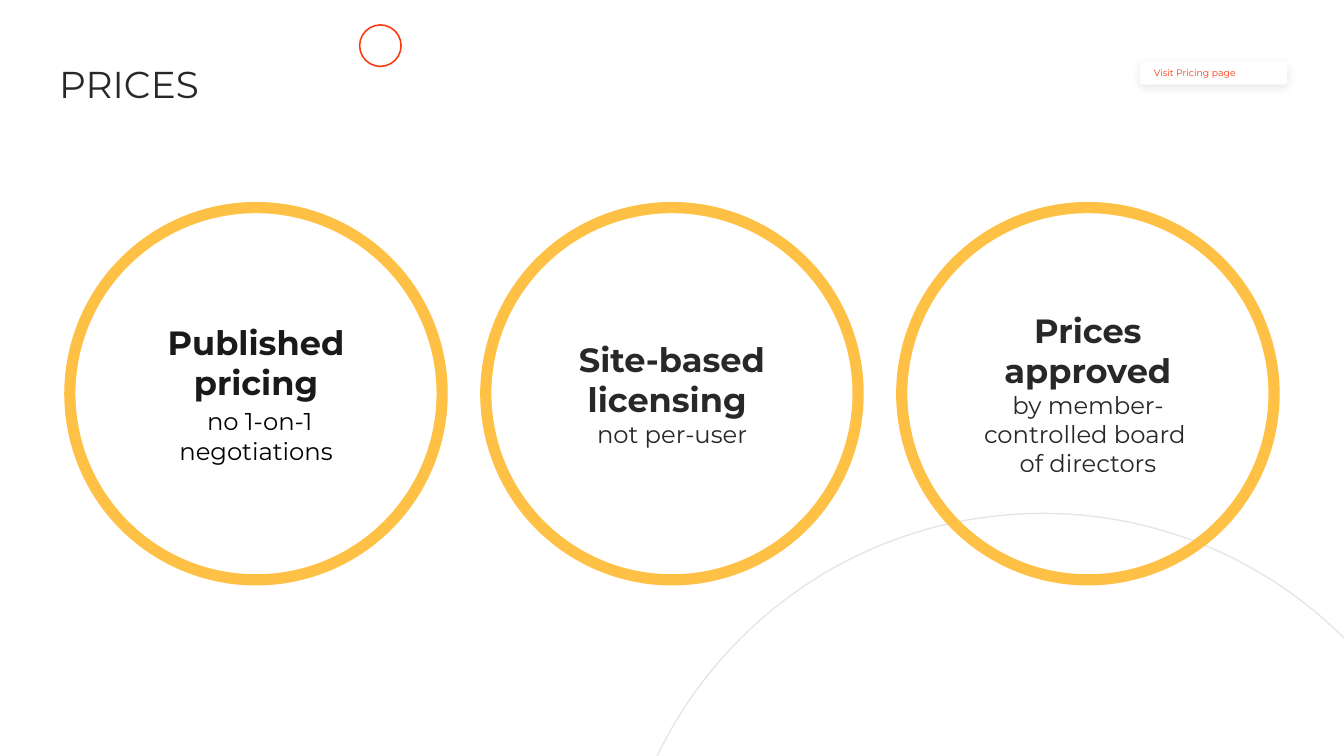
from dataclasses import dataclass

from lxml.etree import SubElement
from pptx import Presentation
from pptx.dml.color import RGBColor
from pptx.enum.shapes import MSO_SHAPE as Shape
from pptx.enum.text import MSO_ANCHOR as Anchor, MSO_AUTO_SIZE as AutoSize, PP_ALIGN as Align
from pptx.oxml.ns import qn
from pptx.util import Inches, Pt

FONT = "Montserrat"
DARK, ORANGE, YELLOW, GREY, WHITE = "282828", "FE360B", "FFC145", "E7E6E6", "FFFFFF"
WIDTH = 10
MARGIN, DIAMETER = 0.52, 2.77
RING_MIDDLE = 2.93

# Outline of the background arc: three corners, then two curves of three points each
ARC_CORNERS = [(10.94, 6.97), (4.58, 6.97), (4.59, 6.68)]
ARC_CURVES = [(4.76, 5.07), (6.11, 3.82), (7.76, 3.82),
              (9.4, 3.82), (10.76, 5.07), (10.92, 6.68)]


@dataclass
class Run:
    text: str
    size: float
    color: str = DARK
    bold: bool = False


@dataclass
class Ring:
    paragraphs: list[list[Run]]


RINGS = [
    Ring([[Run("Published pricing", 18, "1A1A1A", True)],
          [Run(" ", 15), Run("no 1-on-1 negotiations", 13, "000000")]]),
    Ring([[Run("Site-based", 18, bold=True)],
          [Run("licensing ", 18, bold=True)],
          [Run("not per-user", 13)]]),
    Ring([[Run("Prices approved", 18, bold=True)],
          [Run("by member-", 13)],
          [Run("controlled board \n", 13), Run("of directors", 13)]]),
]


def rgb(color: str) -> RGBColor:
    return RGBColor.from_string(color)


def paint(s, fill: str | None = None, line: str | None = None, width: float = 0) -> None:
    s.shadow.inherit = False
    if fill:
        s.fill.solid()
        s.fill.fore_color.rgb = rgb(fill)
    else:
        s.fill.background()
    if line:
        s.line.color.rgb = rgb(line)
        s.line.width = Pt(width)
    else:
        s.line.fill.background()


def write(s, paragraphs: list[list[Run]], align: Align) -> None:
    tf = s.text_frame
    tf.word_wrap = True
    tf.auto_size = AutoSize.NONE
    tf.vertical_anchor = Anchor.MIDDLE
    tf.margin_left = tf.margin_right = tf.margin_top = tf.margin_bottom = Inches(0.1)
    for i, runs in enumerate(paragraphs):
        p = tf.paragraphs[0] if i == 0 else tf.add_paragraph()
        p.alignment = align
        for run in runs:
            r = p.add_run()
            r.text = run.text.rstrip("\n")
            r.font.name = FONT
            r.font.size = Pt(run.size)
            r.font.bold = run.bold
            r.font.color.rgb = rgb(run.color)
            if run.text.endswith("\n"):
                p.add_line_break()


def add_shape(slide, kind: Shape, left: float, top: float, width: float, height: float):
    return slide.shapes.add_shape(kind, Inches(left), Inches(top), Inches(width), Inches(height))


def add_soft_shadow(s, color: str, alpha: int) -> None:
    effects = s._element.spPr.find(qn("a:effectLst"))
    shadow = SubElement(effects, qn("a:outerShdw"), blurRad=str(Pt(4.5)), dist=str(Pt(1.5)),
                        dir="5400000", algn="bl", rotWithShape="0")
    tint = SubElement(shadow, qn("a:srgbClr"), val=color)
    SubElement(tint, qn("a:alpha"), val=str(alpha * 1000))


def add_arc(slide) -> None:
    points = [(Inches(x), Inches(y)) for x, y in ARC_CORNERS + ARC_CURVES]
    builder = slide.shapes.build_freeform(*points[0])
    builder.add_line_segments(points[1:], close=True)
    s = builder.convert_to_shape()
    # Join each three segments after the corners into one Bézier curve
    segments = list(s._element.iter(qn("a:lnTo")))[len(ARC_CORNERS) - 1:]
    for i in range(0, len(ARC_CURVES), 3):
        curve = segments[i].makeelement(qn("a:cubicBezTo"))
        segments[i].addprevious(curve)
        for segment in segments[i:i + 3]:
            curve.append(segment[0])
            segment.getparent().remove(segment)
    paint(s, line=GREY, width=0.75)


def main() -> None:
    prs = Presentation()
    prs.slide_width = Inches(WIDTH)
    prs.slide_height = Inches(WIDTH) * 9 // 16
    slide = prs.slides.add_slide(prs.slide_layouts[5])

    # Link button
    button = add_shape(slide, Shape.ROUNDED_RECTANGLE, 8.48, 0.46, 1.1, 0.17)
    paint(button, fill=WHITE)
    add_soft_shadow(button, "B7B7B7", 35)
    write(button, [[Run("Visit Pricing page", 5, ORANGE)]], Align.LEFT)

    # Background arc
    add_arc(slide)

    # Title, in front of the arc
    title = slide.shapes.title
    title.left, title.top, title.width, title.height = map(Inches, (0.34, 0.31, 6.81, 0.63))
    write(title, [[Run("PRICES", 20)]], Align.LEFT)
    slide.shapes._spTree.append(title._element)

    # Rings, spread evenly between the margins
    pitch = (WIDTH - 2 * MARGIN - DIAMETER) / (len(RINGS) - 1)
    for col, ring in enumerate(RINGS):
        s = add_shape(slide, Shape.OVAL, MARGIN + col * pitch, RING_MIDDLE - DIAMETER / 2,
                      DIAMETER, DIAMETER)
        paint(s, line=YELLOW, width=6)
        write(s, ring.paragraphs, Align.CENTER)

    # Small accent ring
    accent = add_shape(slide, Shape.DONUT, 2.67, 0.18, 0.32, 0.32)
    accent.adjustments[0] = 0.036
    paint(accent, fill=ORANGE)

    prs.save("out.pptx")


if __name__ == "__main__":
    main()
